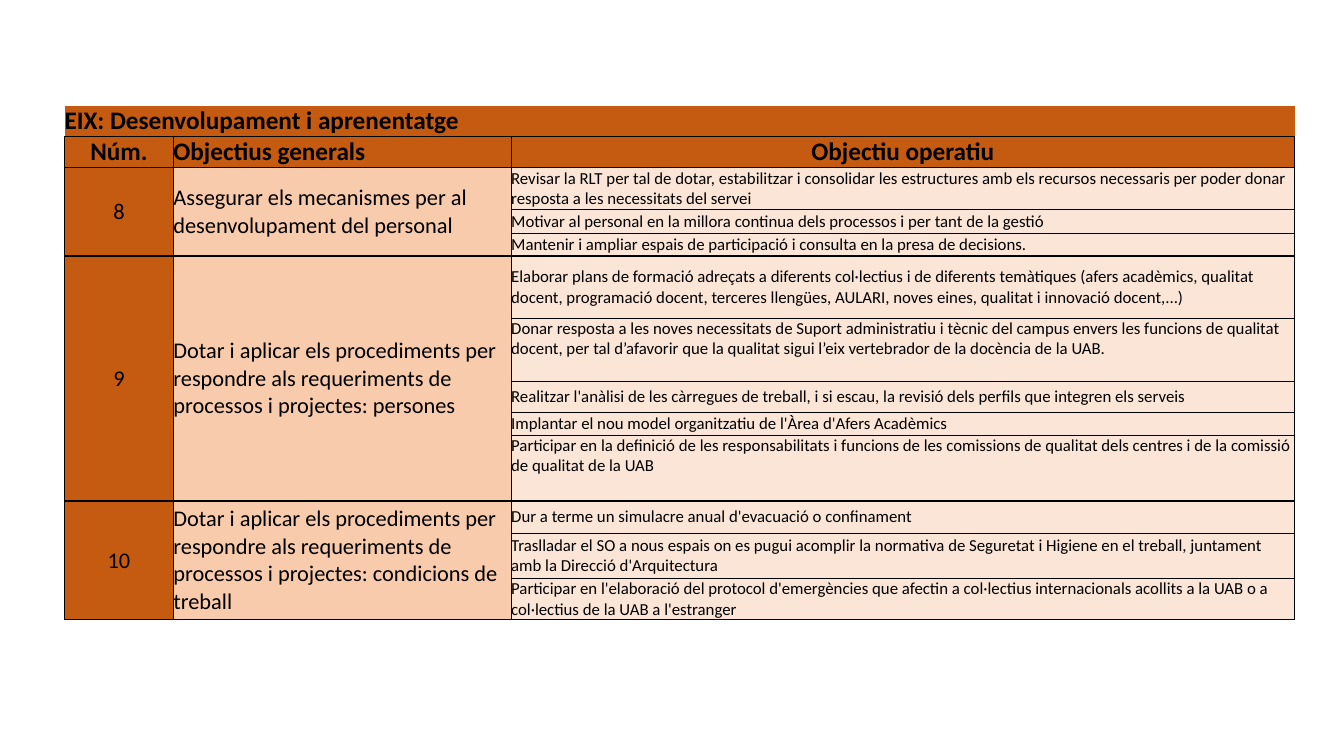
"""Builds the slide with the table of objectives for development and learning."""
from lxml import etree
from pptx import Presentation
from pptx.dml.color import RGBColor
from pptx.enum.text import MSO_ANCHOR, PP_ALIGN
from pptx.oxml.ns import qn
from pptx.util import Inches, Pt

LEFT, CENTER = PP_ALIGN.LEFT, PP_ALIGN.CENTER
TOP, MIDDLE = MSO_ANCHOR.TOP, MSO_ANCHOR.MIDDLE
COLORS = {"text": "000000", "border": "000000", "header": "C55A11",
          "general": "F8CBAD", "operative": "FBE5D6"}
THIN, THICK = 0.5, 1

TITLE = "EIX: Desenvolupament i aprenentatge"
HEADINGS = [("Núm.", CENTER), ("Objectius generals", LEFT), ("Objectiu operatiu", CENTER)]
HEADER_HEIGHT = 0.3
COLUMN_WIDTHS = [1.08, 3.35, 7.77]
GROUPS = [
    ("8", "Assegurar els mecanismes per al desenvolupament del personal", [
        (0.42, MIDDLE, "Revisar la RLT per tal de dotar, estabilitzar i consolidar les estructures "
                       "amb els recursos necessaris per poder donar resposta a les necessitats del servei"),
        (0.23, MIDDLE, "Motivar al personal en la millora continua dels processos i per tant de la gestió"),
        (0.23, MIDDLE, "Mantenir i ampliar espais de participació i consulta en la presa de decisions."),
    ]),
    ("9", "Dotar i aplicar els procediments per respondre als requeriments de processos "
          "i projectes: persones", [
        (0.62, MIDDLE, "Elaborar plans de formació adreçats a diferents col·lectius i de diferents "
                       "temàtiques (afers acadèmics, qualitat docent, programació docent, terceres "
                       "llengües, AULARI, noves eines, qualitat i innovació docent,...)"),
        (0.62, TOP, "Donar resposta a les noves necessitats de Suport administratiu i tècnic del campus "
                    "envers les funcions de qualitat docent, per tal d’afavorir que la qualitat sigui "
                    "l’eix vertebrador de la docència de la UAB."),
        (0.31, MIDDLE, "Realitzar l'anàlisi de les càrregues de treball, i si escau, la revisió dels "
                       "perfils que integren els serveis"),
        (0.23, MIDDLE, "Implantar el nou model organitzatiu de l'Àrea d'Afers Acadèmics"),
        (0.65, TOP, "Participar en la definició de les responsabilitats i funcions de les comissions "
                    "de qualitat dels centres i de la comissió de qualitat de la UAB"),
    ]),
    ("10", "Dotar i aplicar els procediments per respondre als requeriments de processos "
           "i projectes: condicions de treball", [
        (0.32, MIDDLE, "Dur a terme un simulacre anual d'evacuació o confinament"),
        (0.45, MIDDLE, "Traslladar el SO a nous espais on es pugui acomplir la normativa de Seguretat "
                       "i Higiene en el treball, juntament amb la Direcció d'Arquitectura"),
        (0.41, MIDDLE, "Participar en l'elaboració del protocol d'emergències que afectin a col·lectius "
                       "internacionals acollits a la UAB o a col·lectius de la UAB a l'estranger"),
    ]),
]


class SlideBuilder:
    def __init__(self, page, font):
        self.page = page
        self.font = font

    def table(self, left, top, widths, heights):
        frame = self.page.shapes.add_table(len(heights), len(widths), Inches(left), Inches(top),
                                           Inches(sum(widths)), Inches(sum(heights)))
        table = frame.table
        table.first_row = table.horz_banding = False
        for column, width in zip(table.columns, widths):
            column.width = Inches(width)
        for row, height in zip(table.rows, heights):
            row.height = Inches(height)
        return table

    def borders(self, cell, **widths):
        properties = cell._tc.get_or_add_tcPr()
        for side in ("L", "R", "T", "B"):
            width = widths.get(side)
            line = etree.SubElement(properties, qn(f"a:ln{side}"))
            if width is None:
                etree.SubElement(line, qn("a:noFill"))
            else:
                line.set("w", str(Pt(width)))
                fill = etree.SubElement(line, qn("a:solidFill"))
                etree.SubElement(fill, qn("a:srgbClr"), val=COLORS["border"])

    def cell(self, cell, color, **widths):
        self.borders(cell, **widths)
        cell.margin_left = cell.margin_right = cell.margin_top = cell.margin_bottom = 0
        cell.fill.solid()
        cell.fill.fore_color.rgb = RGBColor.from_string(COLORS[color])

    def text(self, cell, text, size, align=LEFT, anchor=MIDDLE, bold=False):
        cell.vertical_anchor = anchor
        para = cell.text_frame.paragraphs[0]
        para.alignment = align
        span = para.add_run()
        span.text = text
        span.font.name = self.font
        span.font.size = Pt(size)
        span.font.bold = bold
        span.font.color.rgb = RGBColor.from_string(COLORS["text"])


def fill_header(builder, table):
    for column, (heading, align) in enumerate(HEADINGS):
        builder.cell(table.cell(0, column), "header", B=THICK)
        cell = table.cell(1, column)
        builder.cell(cell, "header", L=THIN if column else THICK, R=THIN, T=THICK, B=THICK)
        builder.text(cell, heading, 18, align, bold=True)
    table.cell(0, 0).merge(table.cell(0, len(HEADINGS) - 1))
    builder.text(table.cell(0, 0), TITLE, 18, anchor=MSO_ANCHOR.BOTTOM, bold=True)


def fill_group(builder, table, first, number, general, objectives):
    last = first + len(objectives) - 1
    for row, (_, anchor, objective) in enumerate(objectives, first):
        top = THICK if row == first else None
        bottom = THICK if row in (first, last) else None
        builder.cell(table.cell(row, 0), "header", L=THICK, R=THIN, T=top, B=bottom)
        builder.cell(table.cell(row, 1), "general", L=THIN, R=THIN, T=top, B=bottom)
        cell = table.cell(row, 2)
        builder.cell(cell, "operative", L=THIN, R=THIN, T=top or THIN,
                     B=THICK if row == last else THIN)
        builder.text(cell, objective, 12, anchor=anchor)
    for column, (text, align) in enumerate([(number, CENTER), (general, LEFT)]):
        table.cell(first, column).merge(table.cell(last, column))
        builder.text(table.cell(first, column), text, 16, align)


def main():
    deck = Presentation()
    deck.slide_width, deck.slide_height = Inches(13.33), Inches(7.5)
    page = deck.slides.add_slide(deck.slide_layouts[6])
    builder = SlideBuilder(page, "Calibri")
    heights = [HEADER_HEIGHT] * 2 + [objective[0] for group in GROUPS for objective in group[2]]
    table = builder.table(0.64, 1.05, COLUMN_WIDTHS, heights)
    fill_header(builder, table)
    first = 2
    for number, general, objectives in GROUPS:
        fill_group(builder, table, first, number, general, objectives)
        first += len(objectives)
    deck.save("out.pptx")


if __name__ == "__main__":
    main()
